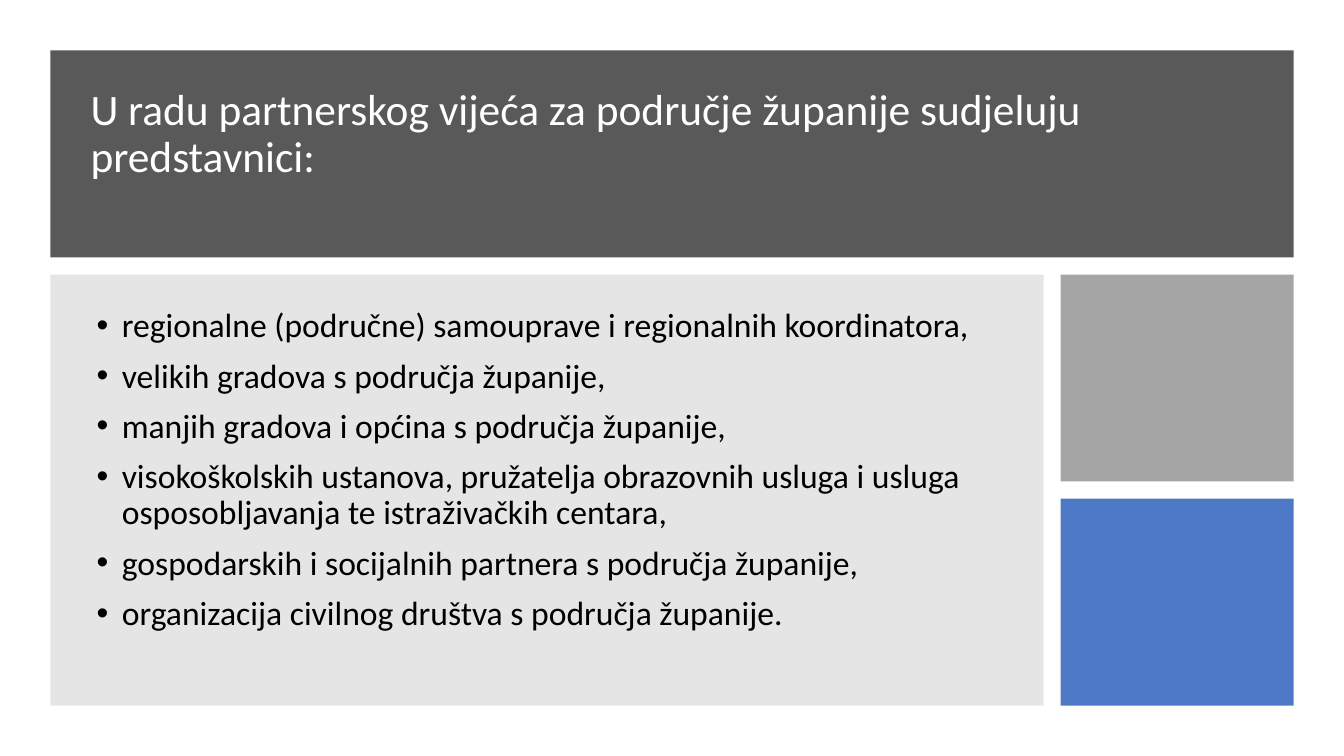
from lxml.etree import SubElement
from pptx import Presentation
from pptx.dml.color import RGBColor
from pptx.enum.shapes import MSO_SHAPE
from pptx.enum.text import MSO_ANCHOR
from pptx.oxml.ns import qn
from pptx.util import Inches, Pt

WIDTH, HEIGHT = 13.33, 7.5
MARGIN, GAP = 0.5, 0.17
FONT = "Calibri"
COLORS = {"band": "595959", "panel": "808080", "upper": "A5A5A5",
          "lower": "4472C4", "title": "FFFFFF", "text": "000000"}

TITLE = "U radu partnerskog vijeća za područje županije sudjeluju predstavnici:"
ITEMS = [
    "regionalne (područne) samouprave i regionalnih koordinatora,",
    "velikih gradova s područja županije,",
    "manjih gradova i općina s područja županije,",
    "visokoškolskih ustanova, pružatelja obrazovnih usluga i usluga "
    "osposobljavanja te istraživačkih centara,",
    "gospodarskih i socijalnih partnera s područja županije,",
    "organizacija civilnog društva s područja županije.",
]


def add_block(slide, box, color, alpha=100):
    """Plain rectangle with an optional opacity in percent."""
    block = slide.shapes.add_shape(MSO_SHAPE.RECTANGLE, *map(Inches, box))
    block.shadow.inherit = False
    block.line.fill.background()
    block.fill.solid()
    block.fill.fore_color.rgb = RGBColor.from_string(COLORS[color])
    if alpha < 100:
        tone = block.fill._xPr.find(qn("a:solidFill"))[0]
        SubElement(tone, qn("a:alpha"), val=str(alpha * 1000))


def add_text(slide, box, lines, size, color):
    """Wrapped text, one paragraph per line; returns the paragraphs."""
    frame = slide.shapes.add_textbox(*map(Inches, box)).text_frame
    frame.word_wrap = True
    frame.vertical_anchor = MSO_ANCHOR.TOP
    frame.text = "\n".join(lines)
    for para in frame.paragraphs:
        para.line_spacing = 0.9
        font = para.runs[0].font
        font.name, font.size = FONT, Pt(size)
        font.color.rgb = RGBColor.from_string(COLORS[color])
    return frame.paragraphs


def add_header(slide, box):
    left, top, width, height = box
    add_block(slide, box, "band")
    inner = (left + 0.3, top + 0.32, width - 0.67, height - 0.5)
    add_text(slide, inner, [TITLE], 31, "title")


def add_list(slide, box):
    left, top, width, height = box
    add_block(slide, box, "panel", 20)
    inner = (left + 0.36, top + 0.29, width - 0.7, height - 0.5)
    paras = add_text(slide, inner, ITEMS, 24, "text")
    for index, para in enumerate(paras):
        para.space_before = Pt(10 if index else 0)
        # Hanging bullet
        props = para._p.get_or_add_pPr()
        props.set("marL", str(Inches(0.25)))
        props.set("indent", str(Inches(-0.25)))
        SubElement(props, qn("a:buFont"), typeface="Arial")
        SubElement(props, qn("a:buChar"), char="•")


def add_tiles(slide, box):
    left, top, width, height = box
    tall = (height - GAP) / 2
    add_block(slide, (left, top, width, tall), "upper")
    add_block(slide, (left, top + tall + GAP, width, tall), "lower", 95)


def main():
    deck = Presentation()
    deck.slide_width, deck.slide_height = Inches(WIDTH), Inches(HEIGHT)
    slide = deck.slides.add_slide(deck.slide_layouts[6])

    # Three equal rows; the side column takes what the list leaves
    full = WIDTH - 2 * MARGIN
    row = (HEIGHT - 2 * MARGIN - 2 * GAP) / 3
    body = MARGIN + row + GAP
    depth = 2 * row + GAP
    wide = 9.85
    add_header(slide, (MARGIN, MARGIN, full, row))
    add_list(slide, (MARGIN, body, wide, depth))
    add_tiles(slide, (MARGIN + wide + GAP, body, full - wide - GAP, depth))
    deck.save("out.pptx")


if __name__ == "__main__":
    main()
